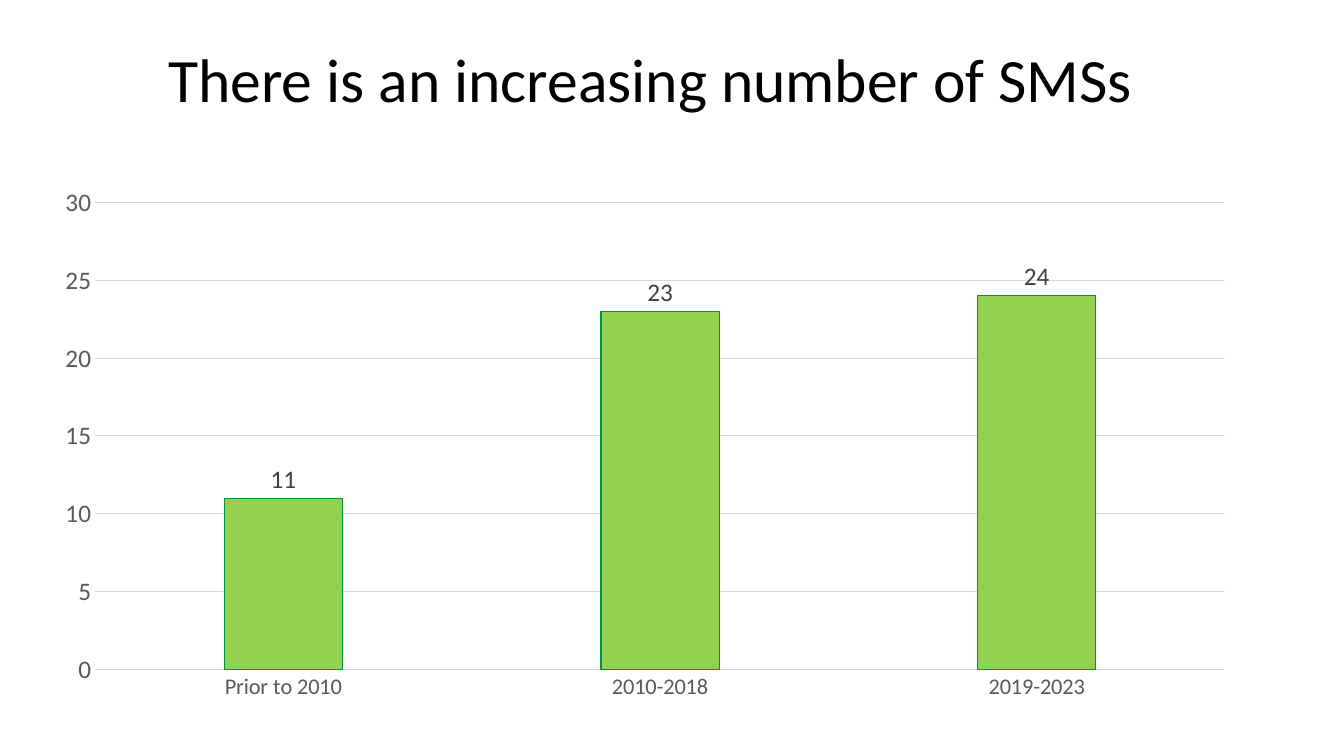
"""Build a slide with a column chart of the number of SMSs by period."""
from pptx import Presentation
from pptx.chart.data import CategoryChartData
from pptx.dml.color import RGBColor
from pptx.enum.chart import XL_CHART_TYPE, XL_LABEL_POSITION, XL_TICK_MARK
from pptx.enum.text import MSO_ANCHOR
from pptx.util import Inches, Pt

COLUMN = XL_CHART_TYPE.COLUMN_CLUSTERED
OUTSIDE_END = XL_LABEL_POSITION.OUTSIDE_END
NO_TICK = XL_TICK_MARK.NONE
MIDDLE = MSO_ANCHOR.MIDDLE

TITLE = "There is an increasing number of SMSs"
SMS_COUNTS = {"Prior to 2010": 11, "2010-2018": 23, "2019-2023": 24}
SLIDE_SIZE = (13.33, 7.5)
TITLE_BOX = (1.57, 0.26, 10.81, 1.12)
CHART_BOX = (0.41, 1.75, 11.98, 5.31)
THEME = {
    "font": "Calibri",
    "title": (44, "000000"),
    "chart": (10, "000000"),
    "categories": (16, "595959"),
    "values": (18, "595959"),
    "labels": (18, "404040"),
    "bar": "92D050",
    "bar_line": "009242",
    "grid": "D9D9D9",
    "line_width": 0.75,
}


def set_font(font, role):
    size, color = THEME[role]
    font.name = THEME["font"]
    font.size = Pt(size)
    font.bold = False
    font.color.rgb = RGBColor.from_string(color)


def set_line(line, role):
    line.color.rgb = RGBColor.from_string(THEME[role])
    line.width = Pt(THEME["line_width"])


def add_title(s):
    tf = s.shapes.add_textbox(*map(Inches, TITLE_BOX)).text_frame
    tf.word_wrap = True
    tf.vertical_anchor = MIDDLE
    p = tf.paragraphs[0]
    p.text = TITLE
    p.line_spacing = 0.9
    set_font(p.font, "title")


def add_sms_chart(s):
    data = CategoryChartData()
    data.categories = list(SMS_COUNTS)
    data.add_series("Series 1", list(SMS_COUNTS.values()))
    chart = s.shapes.add_chart(COLUMN, *map(Inches, CHART_BOX), data).chart
    chart.has_title = False
    chart.has_legend = False
    set_font(chart.font, "chart")

    cat_axis, val_axis = chart.category_axis, chart.value_axis
    for axis, role in ((cat_axis, "categories"), (val_axis, "values")):
        axis.major_tick_mark = axis.minor_tick_mark = NO_TICK
        set_font(axis.tick_labels.font, role)
    set_line(cat_axis.format.line, "grid")
    val_axis.format.line.fill.background()
    val_axis.minimum_scale, val_axis.maximum_scale, val_axis.major_unit = 0, 30, 5
    set_line(val_axis.major_gridlines.format.line, "grid")

    plot = chart.plots[0]
    plot.gap_width, plot.overlap = 219, -27
    plot.vary_by_categories = False
    bars = plot.series[0]
    bars.format.fill.solid()
    bars.format.fill.fore_color.rgb = RGBColor.from_string(THEME["bar"])
    set_line(bars.format.line, "bar_line")
    labels = bars.data_labels
    labels.show_value = True
    labels.position = OUTSIDE_END
    set_font(labels.font, "labels")


def main():
    prs = Presentation()
    prs.slide_width, prs.slide_height = map(Inches, SLIDE_SIZE)
    s = prs.slides.add_slide(prs.slide_layouts[6])
    add_title(s)
    add_sms_chart(s)
    prs.save("out.pptx")


if __name__ == "__main__":
    main()
